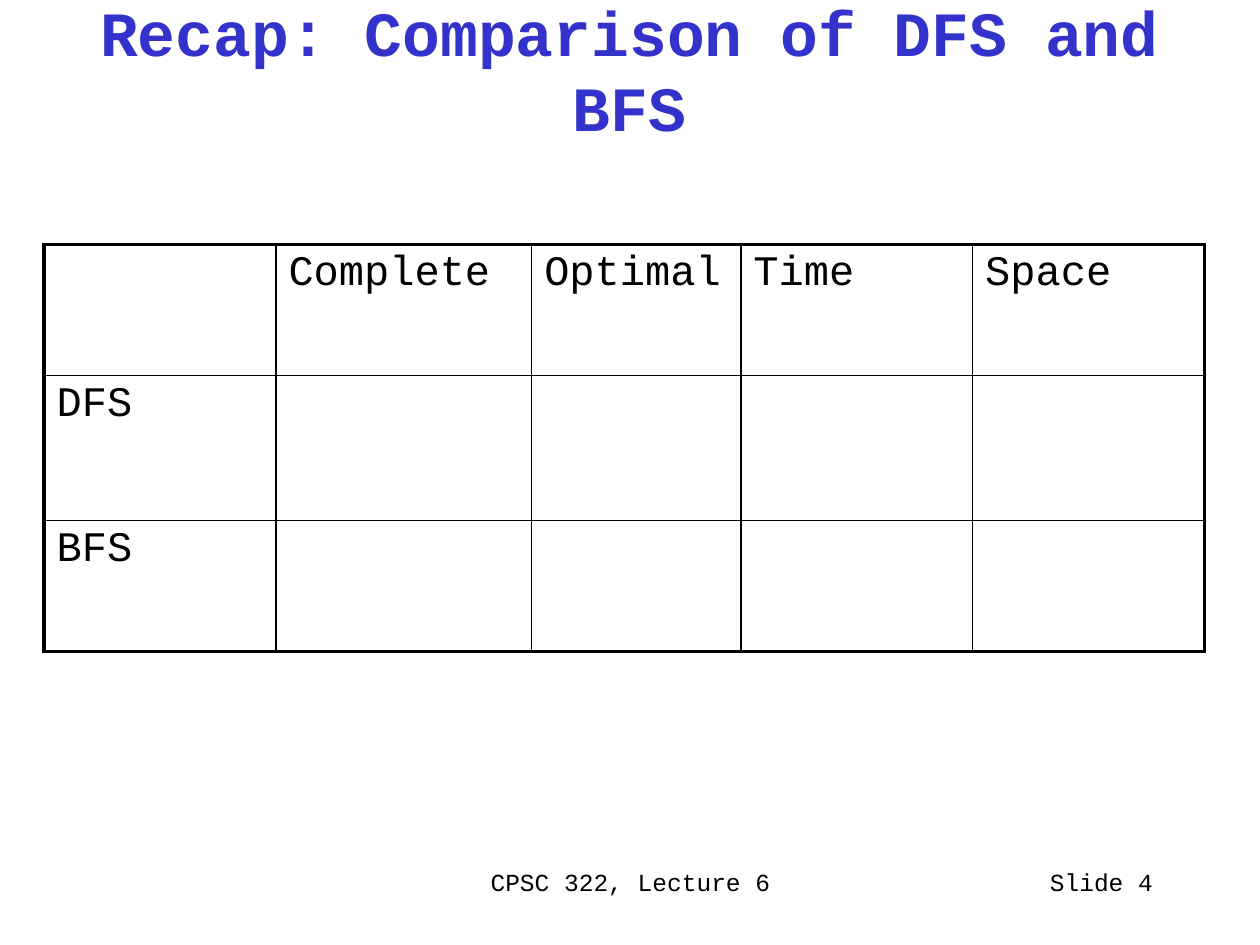
import lxml.etree
import pptx
import pptx.dml.color
import pptx.enum.text
import pptx.oxml.ns
import pptx.util

Inches = pptx.util.Inches
Align = pptx.enum.text.PP_ALIGN
Anchor = pptx.enum.text.MSO_ANCHOR

FONT = "Courier New"
BLACK = "000000"
BLUE = "3333CC"
THIN, THICK = 1, 2.25

COLUMN_WIDTHS = [1.84, 2.03, 1.66, 1.84, 1.84]
ROW_HEIGHTS = [1.04, 1.15, 1.04]
COMPARISON = [
    ["", "Complete", "Optimal", "Time", "Space"],
    ["DFS", "", "", "", ""],
    ["BFS", "", "", "", ""],
]


def color(value):
    """Return the colour for a hex string."""
    return pptx.dml.color.RGBColor.from_string(value)


def write(frame, text, size, hex_color=BLACK, align=Align.LEFT, bold=False):
    """Put one formatted line of text in a frame and return its paragraph."""
    frame.text = text
    para = frame.paragraphs[0]
    para.alignment = align
    for span in para.runs:
        span.font.name = FONT
        span.font.size = pptx.util.Pt(size)
        span.font.bold = bold
        span.font.color.rgb = color(hex_color)
    return para


def add_title(page, text):
    """Fill and place the title placeholder."""
    title = page.shapes.title
    title.left, title.top = Inches(0.33), Inches(0.17)
    title.width, title.height = Inches(9.33), Inches(0.75)
    frame = title.text_frame
    frame.auto_size = pptx.enum.text.MSO_AUTO_SIZE.NONE
    frame.vertical_anchor = Anchor.MIDDLE
    write(frame, text, 36, BLUE, Align.CENTER, bold=True)


def add_footer(page, left, width, text, align):
    """Add a small text box on the footer line."""
    box = page.shapes.add_textbox(Inches(left), Inches(6.83), Inches(width), Inches(0.5))
    box.text_frame.word_wrap = True
    write(box.text_frame, text, 14, align=align)


def set_borders(cell, widths):
    """Draw the cell's borders from a mapping of side to width in points."""
    properties = cell._tc.get_or_add_tcPr()
    qn = pptx.oxml.ns.qn
    for position, side in enumerate("LRTB"):
        line = lxml.etree.Element(qn(f"a:ln{side}"), w=str(pptx.util.Pt(widths[side])))
        fill = lxml.etree.SubElement(line, qn("a:solidFill"))
        lxml.etree.SubElement(fill, qn("a:srgbClr"), val=BLACK)
        properties.insert(position, line)


def add_comparison(page, rows):
    """Add the ruled table with a thick outer frame."""
    row_count, column_count = len(rows), len(rows[0])
    table = page.shapes.add_table(
        row_count, column_count, Inches(0.35), Inches(1.94),
        Inches(sum(COLUMN_WIDTHS)), Inches(sum(ROW_HEIGHTS)),
    ).table
    table.first_row = table.horz_banding = False
    for column, width in zip(table.columns, COLUMN_WIDTHS):
        column.width = Inches(width)
    for row, height in zip(table.rows, ROW_HEIGHTS):
        row.height = Inches(height)
    for r, texts in enumerate(rows):
        for c, text in enumerate(texts):
            cell = table.cell(r, c)
            cell.fill.background()
            if text:
                para = write(cell.text_frame, text, 24)
                para.space_before = pptx.util.Pt(4.8)
            outer = {"L": c == 0, "R": c == column_count - 1,
                     "T": r == 0, "B": r == row_count - 1}
            set_borders(cell, {side: THICK if edge else THIN for side, edge in outer.items()})


def main():
    """Build and save the slide."""
    deck = pptx.Presentation()
    deck.slide_width, deck.slide_height = Inches(10), Inches(7.5)
    page = deck.slides.add_slide(deck.slide_layouts.get_by_name("Title Only"))
    add_footer(page, 3.42, 3.17, "CPSC 322, Lecture 6", Align.CENTER)
    add_footer(page, 7.17, 2.08, "Slide 4", Align.RIGHT)
    add_title(page, "Recap: Comparison of DFS and BFS")
    add_comparison(page, COMPARISON)
    deck.save("out.pptx")


if __name__ == "__main__":
    main()
